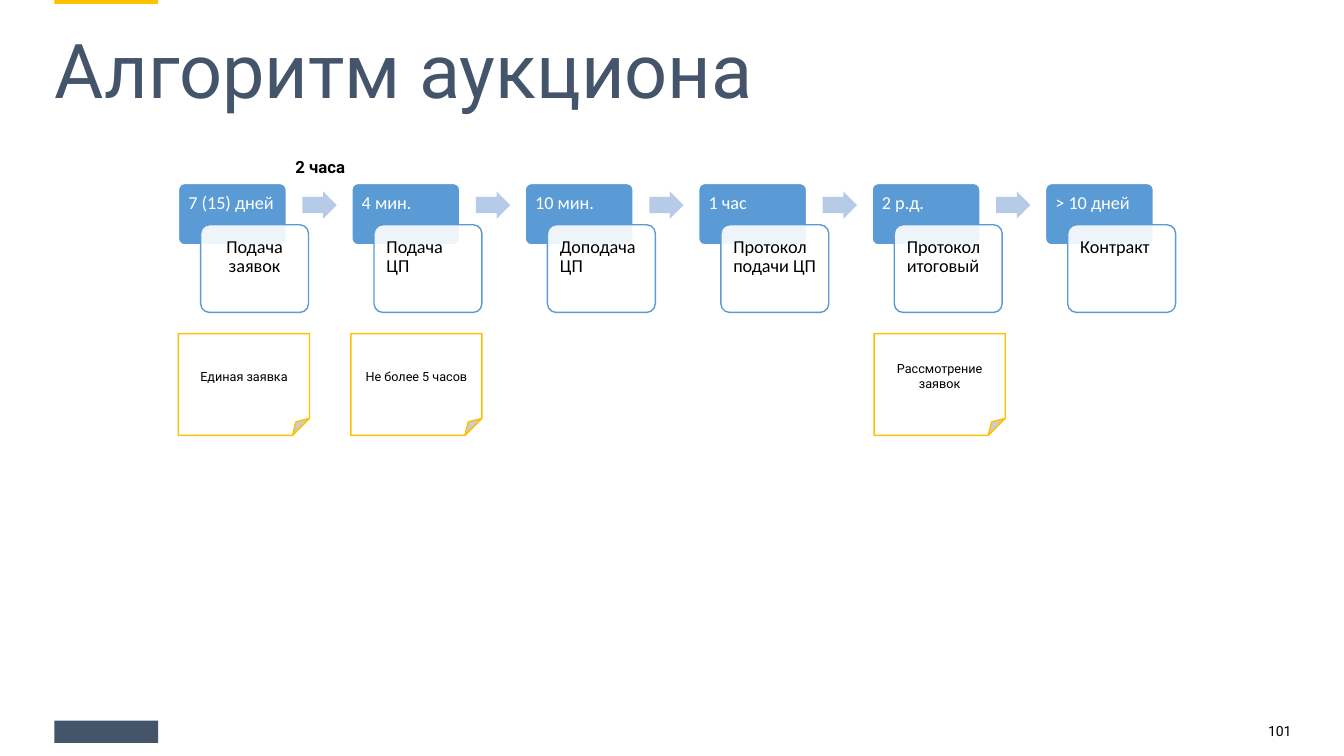
from pptx import Presentation
from pptx.dml.color import RGBColor
from pptx.enum.shapes import MSO_SHAPE
from pptx.enum.text import MSO_ANCHOR, MSO_AUTO_SIZE, PP_ALIGN
from pptx.oxml.ns import qn
from pptx.util import Inches, Pt
from lxml import etree

RECT, ROUNDED = MSO_SHAPE.RECTANGLE, MSO_SHAPE.ROUNDED_RECTANGLE
ARROW, NOTE = MSO_SHAPE.RIGHT_ARROW, MSO_SHAPE.FOLDED_CORNER
LEFT, CENTER, RIGHT = PP_ALIGN.LEFT, PP_ALIGN.CENTER, PP_ALIGN.RIGHT
TOP, MIDDLE = MSO_ANCHOR.TOP, MSO_ANCHOR.MIDDLE

# Content
TITLE = "Алгоритм аукциона"
PAGE_NUMBER = "101"
PAUSE = "2 часа"
STAGES = [  # duration, action, action alignment
    ("7 (15) дней", "Подача заявок", CENTER),
    ("4 мин.", "Подача ЦП", LEFT),
    ("10 мин.", "Доподача ЦП", LEFT),
    ("1 час", "Протокол подачи ЦП", LEFT),
    ("2 р.д.", "Протокол итоговый", LEFT),
    ("> 10 дней", "Контракт", LEFT),
]
NOTES = [  # left edge, text
    (1.77, "Единая заявка"),
    (3.48, "Не более 5 часов"),
    (8.67, "Рассмотрение заявок"),
]
COLORS = {"slate": "44546A", "gold": "FFC000", "blue": "5B9BD5",
          "pale": "B5CBE7", "white": "FFFFFF", "black": "000000"}

# Layout, in inches
SLIDE_W, SLIDE_H = 13.33, 7.5
MARGIN = 0.54
BRAND_W = 1.03
STAGE_LEFT, STAGE_TOP, STAGE_PITCH = 1.77, 1.82, 1.72
STAGE_W = 1.07
CARD_DX, CARD_DY = 0.22, 0.41
ARROW_DX, ARROW_DY = 1.23, 0.08
NOTE_TOP, NOTE_W, NOTE_H = 3.31, 1.3, 1.01

prs = Presentation()
prs.slide_width, prs.slide_height = Inches(SLIDE_W), Inches(SLIDE_H)
slide = prs.slides.add_slide(prs.slide_layouts[6])


def rgb(name):
    return RGBColor.from_string(COLORS[name])


def add_block(kind, box, fill, line=None, adjustments=()):
    block = slide.shapes.add_shape(kind, *map(Inches, box))
    block.shadow.inherit = False
    block.fill.solid()
    block.fill.fore_color.rgb = rgb(fill)
    if line:
        block.line.color.rgb = rgb(line)
        block.line.width = Pt(1)
    else:
        block.line.fill.background()
    for i, value in enumerate(adjustments):
        block.adjustments[i] = value
    return block


def write(holder, text, size, font, color, align=LEFT, anchor=TOP,
          insets=(0.1, 0.05, 0.1, 0.05), spacing=1.0, bold=False):
    frame = holder.text_frame
    frame.word_wrap = True
    frame.vertical_anchor = anchor
    (frame.margin_left, frame.margin_top,
     frame.margin_right, frame.margin_bottom) = map(Inches, insets)
    paragraph = frame.paragraphs[0]
    paragraph.text = text
    paragraph.alignment = align
    paragraph.line_spacing = spacing
    paragraph.font.size = Pt(size)
    paragraph.font.name = font
    paragraph.font.bold = bold
    paragraph.font.color.rgb = rgb(color)


def add_label(box, *args, **kwargs):
    label = slide.shapes.add_textbox(*map(Inches, box))
    write(label, *args, **kwargs)
    return label


def set_opacity(block, percent):
    color = block.fill._xPr.find(qn("a:solidFill"))[0]
    etree.SubElement(color, qn("a:alpha")).set("val", str(percent * 1000))


# Frame: brand placeholder, top accent, page number, title
add_block(RECT, (MARGIN, 7.15, BRAND_W, 0.22), "slate")
add_block(RECT, (MARGIN, 0, BRAND_W, 0.04), "gold")
add_label((10.95, 7.19, 1.86, 0.31), PAGE_NUMBER, 10, "Roboto", "black",
          align=RIGHT, insets=(0, 0, 0, 0), spacing=0.9)
add_label((MARGIN, 0.35, SLIDE_W - 2 * MARGIN, 1.43), TITLE, 54, "Roboto",
          "slate", insets=(0, 0.05, 0, 0.05), spacing=0.8)

# Stages: duration tab, overlapping action card, arrow to the next stage
for i, (duration, action, align) in enumerate(STAGES):
    left = STAGE_LEFT + i * STAGE_PITCH
    tab = add_block(ROUNDED, (left, STAGE_TOP, STAGE_W, 0.61),
                    "blue", "white", [0.1])
    write(tab, duration, 13, "Calibri", "white",
          insets=(0.08, 0.08, 0.08, 0.05), spacing=0.9)
    card = add_block(ROUNDED, (left + CARD_DX, STAGE_TOP + CARD_DY, STAGE_W, 0.87),
                     "white", "blue", [0.1])
    set_opacity(card, 90)
    write(card, action, 13, "Calibri", "black", align=align,
          insets=(0.1, 0.1, 0.1, 0.1), spacing=0.9)
    if i < len(STAGES) - 1:
        add_block(ARROW, (left + ARROW_DX, STAGE_TOP + ARROW_DY, 0.34, 0.27),
                  "pale", adjustments=[0.6, 0.5])

# Pause between the first two stages
pause_label = add_label((2.83, 1.51, 0.92, 0.3), PAUSE, 12, "Roboto", "black",
                        bold=True)
pause_label.text_frame.auto_size = MSO_AUTO_SIZE.SHAPE_TO_FIT_TEXT

# Notes under the stages
for left, text in NOTES:
    note = add_block(NOTE, (left, NOTE_TOP, NOTE_W, NOTE_H), "white", "gold")
    write(note, text, 9, "Roboto", "black", align=CENTER, anchor=MIDDLE)

prs.save("out.pptx")
